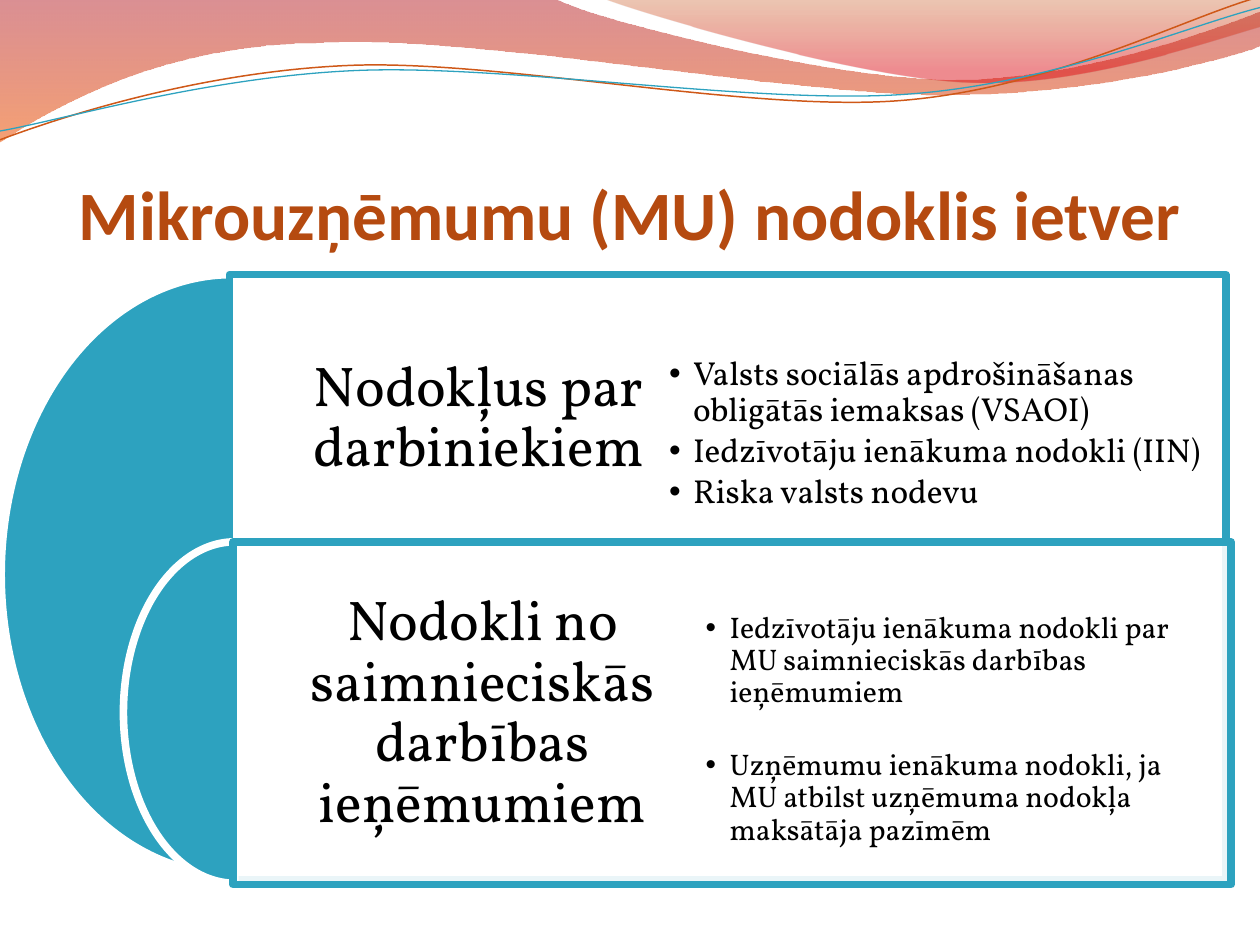
from lxml import etree
from pptx import Presentation
from pptx.dml.color import RGBColor
from pptx.enum.shapes import MSO_SHAPE
from pptx.enum.text import MSO_ANCHOR, MSO_AUTO_SIZE, PP_ALIGN
from pptx.oxml.ns import qn
from pptx.util import Inches, Pt

TEAL, WHITE, BLACK = "2DA2BF", "FFFFFF", "000000"
BORDER = 4.33

UPPER_WAVE = [
    [(0, -0.01)], [(4.4, -0.01)],
    [(4.76, 0.17), (6.64, 0.63), (7.58, 0.63)],
    [(8.53, 0.63), (9.58, 0.26), (10, 0.09)],
    [(10.01, 0.36)],
    [(9.83, 0.44), (8.7, 0.76), (7.46, 0.75)],
    [(6.22, 0.75), (3.82, 0.28), (2.57, 0.34)],
    [(1.29, 0.35), (0.46, 0.83), (-0.01, 1.13)],
]
RIGHT_WAVE = [
    [(4.79, -0.01)],
    [(5.09, 0.11), (6.82, 0.62), (7.69, 0.65)],
    [(8.56, 0.69), (9.61, 0.32), (10, 0.21)],
    [(10, 0)],
]
ORANGE_CURVE = [
    [(0, 1.11)],
    [(0.48, 0.93), (1.58, 0.57), (2.77, 0.52)],
    [(3.95, 0.47), (5.93, 0.89), (7.13, 0.8)],
    [(8.33, 0.71), (9.38, 0.15), (9.98, -0.02)],
]
TEAL_CURVE = [
    [(0, 1.04)],
    [(0.47, 0.96), (1.64, 0.61), (2.83, 0.56)],
    [(4.03, 0.51), (5.97, 0.83), (7.17, 0.75)],
    [(8.36, 0.67), (9.41, 0.21), (10, 0.06)],
]


def rgb(color):
    """Turn a hex string into a colour."""
    return RGBColor.from_string(color)


def set_alpha(element, percent):
    """Set the opacity of the first colour inside an element."""
    clr = next(element.iter(qn("a:srgbClr")))
    etree.SubElement(clr, qn("a:alpha"), val=str(percent * 1000))


def set_line(sp, color, width):
    """Give a shape a solid outline."""
    sp.line.color.rgb = rgb(color)
    sp.line.width = Pt(width)


def add_outline(s, segments, close):
    """Add a freeform whose three-point segments are cubic curves."""
    points = [(Inches(x), Inches(y)) for segment in segments for x, y in segment]
    builder = s.shapes.build_freeform(*points[0], scale=1.0)
    builder.add_line_segments(points[1:], close=close)
    sp = builder.convert_to_shape()
    sp.shadow.inherit = False
    lines = iter(list(sp.element.iter(qn("a:lnTo"))))
    for segment in segments[1:]:
        group = [next(lines) for _ in segment]
        if len(group) == 3:
            group[0].tag = qn("a:cubicBezTo")
            for line in group[1:]:
                group[0].append(line[0])
                line.getparent().remove(line)
    return sp


def add_wave(s, segments, stops):
    """Add a translucent wave shaded from top to bottom."""
    sp = add_outline(s, segments, True)
    sp.line.fill.background()
    sp.fill.gradient()
    sp.fill.gradient_angle = 270
    elements = list(sp.element.iter(qn("a:gs")))
    for stop, gs, (position, color, alpha) in zip(sp.fill.gradient_stops, elements, stops):
        stop.position = position
        stop.color.rgb = rgb(color)
        set_alpha(gs, alpha)


def add_curve(s, segments, color, width):
    """Add a thin curved line."""
    sp = add_outline(s, segments, False)
    sp.fill.background()
    set_line(sp, color, width)


def add_block(s, kind, box, fill, line):
    """Add a filled and outlined preset shape."""
    sp = s.shapes.add_shape(kind, *map(Inches, box))
    sp.shadow.inherit = False
    sp.fill.solid()
    sp.fill.fore_color.rgb = rgb(fill)
    set_line(sp, line, BORDER)
    return sp


def add_half_pie(s, box):
    """Add the left half of an ellipse."""
    sp = add_block(s, MSO_SHAPE.PIE, box, TEAL, WHITE)
    sp.adjustments[0] = 54
    sp.adjustments[1] = 162


def add_panel(s, box):
    """Add a nearly opaque white panel."""
    sp = add_block(s, MSO_SHAPE.RECTANGLE, box, WHITE, TEAL)
    set_alpha(next(sp.element.iter(qn("a:solidFill"))), 90)


def add_text(s, box, inset, size, texts):
    """Add a vertically centred text box and return its paragraphs."""
    tf = s.shapes.add_textbox(*map(Inches, box)).text_frame
    tf.word_wrap = True
    tf.vertical_anchor = MSO_ANCHOR.MIDDLE
    tf.margin_left = tf.margin_top = tf.margin_right = tf.margin_bottom = Inches(inset)
    for i, text in enumerate(texts):
        p = tf.add_paragraph() if i else tf.paragraphs[0]
        p.line_spacing = 0.9
        r = p.add_run()
        r.text = text
        r.font.name = "Vollkorn"
        r.font.size = Pt(size)
        r.font.color.rgb = rgb(BLACK)
    return tf.paragraphs


def add_heading(s, box, text):
    """Add the centred heading of a panel."""
    for p in add_text(s, box, 0.13, 32, [text]):
        p.alignment = PP_ALIGN.CENTER


def add_bullets(s, box, size, texts, gap=0):
    """Add a bulleted list with an optional gap between its items."""
    for i, p in enumerate(add_text(s, box, 0.07, size, texts)):
        p.level = 1
        p.space_after = Pt(3)
        p.space_before = Pt(gap if i else 0)
        pPr = p._p.get_or_add_pPr()
        pPr.set("marL", str(Inches(0.19)))
        pPr.set("indent", str(-Inches(0.19)))
        etree.SubElement(pPr, qn("a:buFont"), typeface="Arial")
        etree.SubElement(pPr, qn("a:buChar"), char="•")


def set_title(s, text):
    """Place and format the title."""
    sp = s.shapes.title
    sp.left, sp.top, sp.width, sp.height = map(Inches, (0.5, 0.77, 9, 1.25))
    tf = sp.text_frame
    tf.auto_size = MSO_AUTO_SIZE.NONE
    tf.vertical_anchor = MSO_ANCHOR.BOTTOM
    tf.margin_left = tf.margin_right = tf.margin_bottom = 0
    tf.margin_top = Inches(0.05)
    p = tf.paragraphs[0]
    p.alignment = PP_ALIGN.CENTER
    r = p.add_run()
    r.text = text
    r.font.name = "Calibri"
    r.font.size = Pt(39.6)
    r.font.bold = True
    r.font.color.rgb = rgb("B54A10")


def main():
    """Build the slide."""
    prs = Presentation()
    prs.slide_width, prs.slide_height = Inches(10), Inches(7.5)
    s = prs.slides.add_slide(prs.slide_layouts[5])
    add_wave(s, UPPER_WAVE, [(0, "AF0911", 45), (1, "EE5300", 55)])
    add_wave(s, RIGHT_WAVE, [(0, "C24400", 30), (0.8, "DC000B", 45)])
    add_curve(s, ORANGE_CURVE, "CF5818", 0.85)
    add_curve(s, TEAL_CURVE, TEAL, 0.75)
    set_title(s, "Mikrouzņēmumu (MU) nodoklis ietver")
    add_half_pie(s, (0.01, 2.18, 3.66, 4.76))
    add_panel(s, (1.82, 2.18, 7.91, 4.8))
    add_heading(s, (1.82, 2.18, 3.96, 2.28), "Nodokļus par darbiniekiem")
    add_half_pie(s, (0.98, 4.3, 1.77, 2.71))
    add_panel(s, (1.85, 4.3, 7.92, 2.72))
    add_heading(s, (1.85, 4.3, 3.96, 2.72), "Nodokli no saimnieciskās darbības ieņēmumiem")
    add_bullets(s, (5.24, 2.18, 4.47, 2.53), 19, [
        "Valsts sociālās apdrošināšanas obligātās iemaksas (VSAOI)",
        "Iedzīvotāju ienākuma nodokli (IIN)",
        "Riska valsts nodevu"])
    add_bullets(s, (5.53, 4.65, 3.99, 2.28), 17, [
        "Iedzīvotāju ienākuma nodokli par MU saimnieciskās darbības ieņēmumiem",
        "Uzņēmumu ienākuma nodokli, ja MU atbilst uzņēmuma nodokļa maksātāja pazīmēm"],
        gap=20.5)
    prs.save("out.pptx")


if __name__ == "__main__":
    main()
